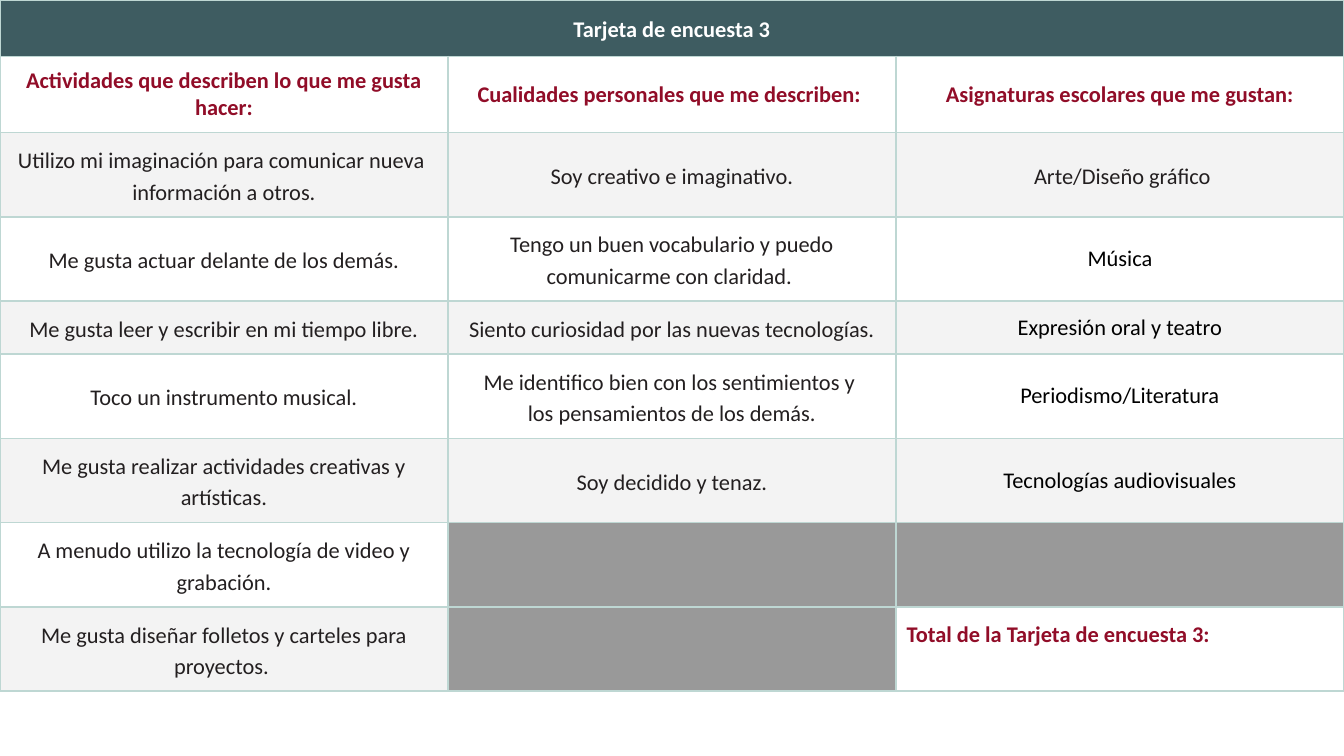
from dataclasses import dataclass

from lxml import etree
from pptx import Presentation
from pptx.dml.color import RGBColor
from pptx.enum.text import MSO_ANCHOR, PP_ALIGN
from pptx.oxml.ns import qn
from pptx.util import Inches, Pt

CENTER, LEFT = PP_ALIGN.CENTER, PP_ALIGN.LEFT
MIDDLE, TOP = MSO_ANCHOR.MIDDLE, MSO_ANCHOR.TOP


@dataclass(frozen=True)
class Theme:
    font: str = "Calibri"
    size: int = 12
    banner: str = "3E5C61"
    heading: str = "910D28"
    ink: str = "231F20"
    black: str = "000000"
    white: str = "FFFFFF"
    band: str = "F3F3F3"
    blocked: str = "999999"
    border: str = "BED7D3"


THEME = Theme()

# Content: a line break starts a new paragraph, None is a blocked cell
TITLE = "Tarjeta de encuesta 3"
TOTAL = "Total de la Tarjeta de encuesta 3:"
HEADINGS = [
    "Actividades que describen lo que me gusta hacer:",
    "Cualidades personales que me describen: ",
    "Asignaturas escolares que me gustan:",
]
ANSWERS = [
    ("Utilizo mi imaginación para comunicar nueva \ninformación a otros.",
     "Soy creativo e imaginativo.", " Arte/Diseño gráfico"),
    ("Me gusta actuar delante de los demás.",
     "Tengo un buen vocabulario y puedo comunicarme con claridad. ", "Música"),
    ("Me gusta leer y escribir en mi tiempo libre.",
     "Siento curiosidad por las nuevas tecnologías.", "Expresión oral y teatro"),
    ("Toco un instrumento musical.",
     "Me identifico bien con los sentimientos y \nlos pensamientos de los demás.",
     "Periodismo/Literatura"),
    ("Me gusta realizar actividades creativas y artísticas.",
     "Soy decidido y tenaz.", "Tecnologías audiovisuales"),
    ("A menudo utilizo la tecnología de video y grabación.", None, None),
    ("Me gusta diseñar folletos y carteles para proyectos. ", None, TOTAL),
]
# Least heights: rows grow to fit their text
ROW_HEIGHTS = [0.42, 0.49, 0.55, 0.55, 0.35, 0.55, 0.45, 0.45, 0.55]
TABLE_HEIGHT = 5
MARGIN = 0.08


def write(cell, text, color=THEME.ink, bold=False, align=CENTER, anchor=MIDDLE,
          spacing=None, before=None, after=None, margin_top=MARGIN):
    cell.vertical_anchor = anchor
    cell.margin_left = cell.margin_right = cell.margin_bottom = Inches(MARGIN)
    cell.margin_top = Inches(margin_top)
    frame = cell.text_frame
    for index, line in enumerate(text.split("\n")):
        para = frame.add_paragraph() if index else frame.paragraphs[0]
        para.alignment = align
        para.line_spacing = spacing
        para.space_before, para.space_after = before, after
        span = para.add_run()
        span.text = line
        span.font.name, span.font.size = THEME.font, Pt(THEME.size)
        span.font.bold = bold
        span.font.color.rgb = RGBColor.from_string(color)


def paint(cell, fill):
    # Borders come before the fill in the cell properties
    properties = cell._tc.get_or_add_tcPr()
    for side in ("a:lnL", "a:lnR", "a:lnT", "a:lnB"):
        line = etree.SubElement(properties, qn(side), w=str(Pt(1)))
        solid = etree.SubElement(line, qn("a:solidFill"))
        etree.SubElement(solid, qn("a:srgbClr"), val=THEME.border)
    cell.fill.solid()
    cell.fill.fore_color.rgb = RGBColor.from_string(fill)


def main():
    # Widescreen page, 16 to 9
    deck = Presentation()
    deck.slide_width = Inches(10)
    deck.slide_height = deck.slide_width * 9 // 16
    page = deck.slides.add_slide(deck.slide_layouts[6])

    # Table grid
    columns = len(HEADINGS)
    holder = page.shapes.add_table(len(ROW_HEIGHTS), columns, 0, 0,
                                   deck.slide_width, Inches(TABLE_HEIGHT))
    table = holder.table
    table.first_row = table.horz_banding = False
    for column in table.columns:
        column.width = deck.slide_width // columns
    for row, height in zip(table.rows, ROW_HEIGHTS):
        row.height = Inches(height)
    holder.height = Inches(TABLE_HEIGHT)

    # Banner across all columns
    banner = table.cell(0, 0)
    banner.merge(table.cell(0, columns - 1))
    for column in range(columns):
        paint(table.cell(0, column), THEME.banner)
    write(banner, TITLE, color=THEME.white, bold=True, spacing=1.15, after=Pt(6))

    # Column headings
    for column, heading in enumerate(HEADINGS):
        cell = table.cell(1, column)
        paint(cell, THEME.white)
        write(cell, heading, color=THEME.heading, bold=True, before=Pt(10))

    # Answers in alternating bands
    for index, answers in enumerate(ANSWERS):
        band = THEME.white if index % 2 else THEME.band
        for column, text in enumerate(answers):
            cell = table.cell(index + 2, column)
            if text is None:
                paint(cell, THEME.blocked)
            elif text == TOTAL:
                paint(cell, THEME.white)
                write(cell, text, color=THEME.heading, bold=True, align=LEFT,
                      anchor=TOP, before=Pt(10), margin_top=0.11)
            elif column == columns - 1 and index > 0:
                paint(cell, band)
                write(cell, text, color=THEME.black)
            else:
                paint(cell, band)
                write(cell, text, spacing=1.15)

    deck.save("out.pptx")


if __name__ == "__main__":
    main()
